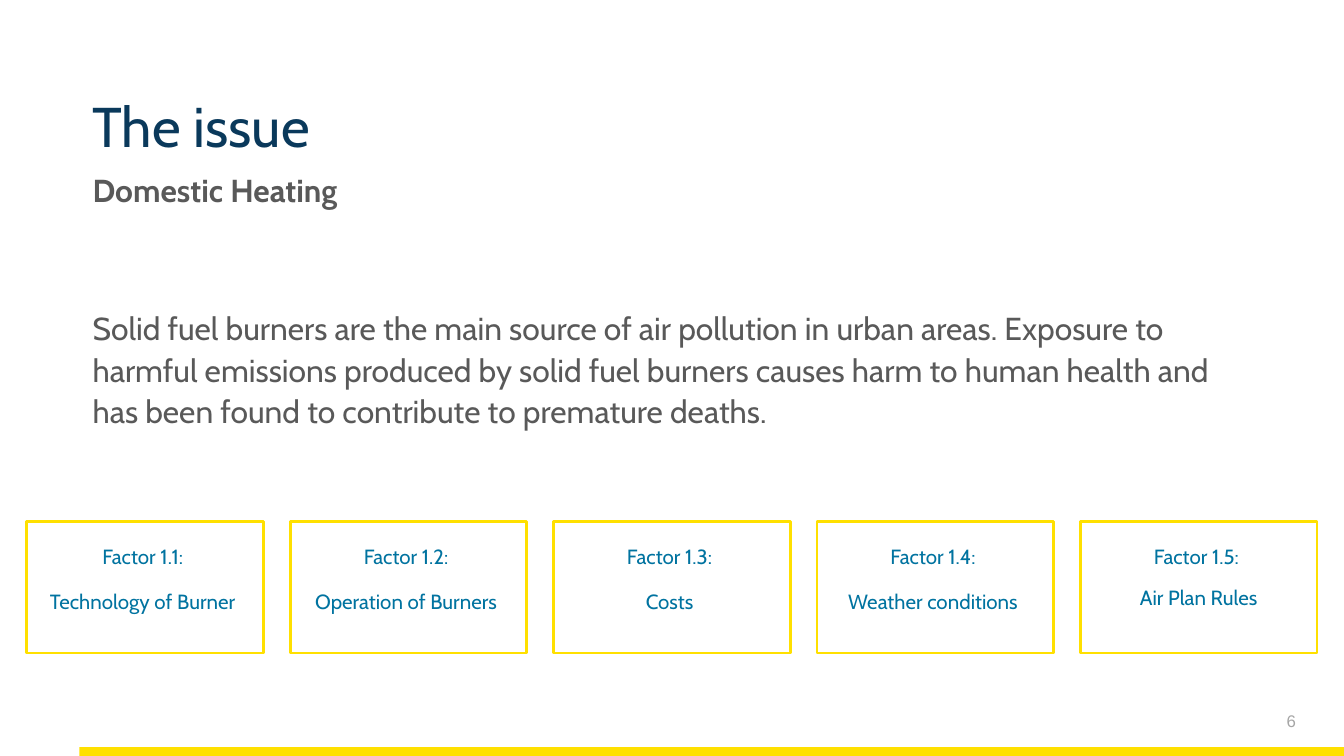
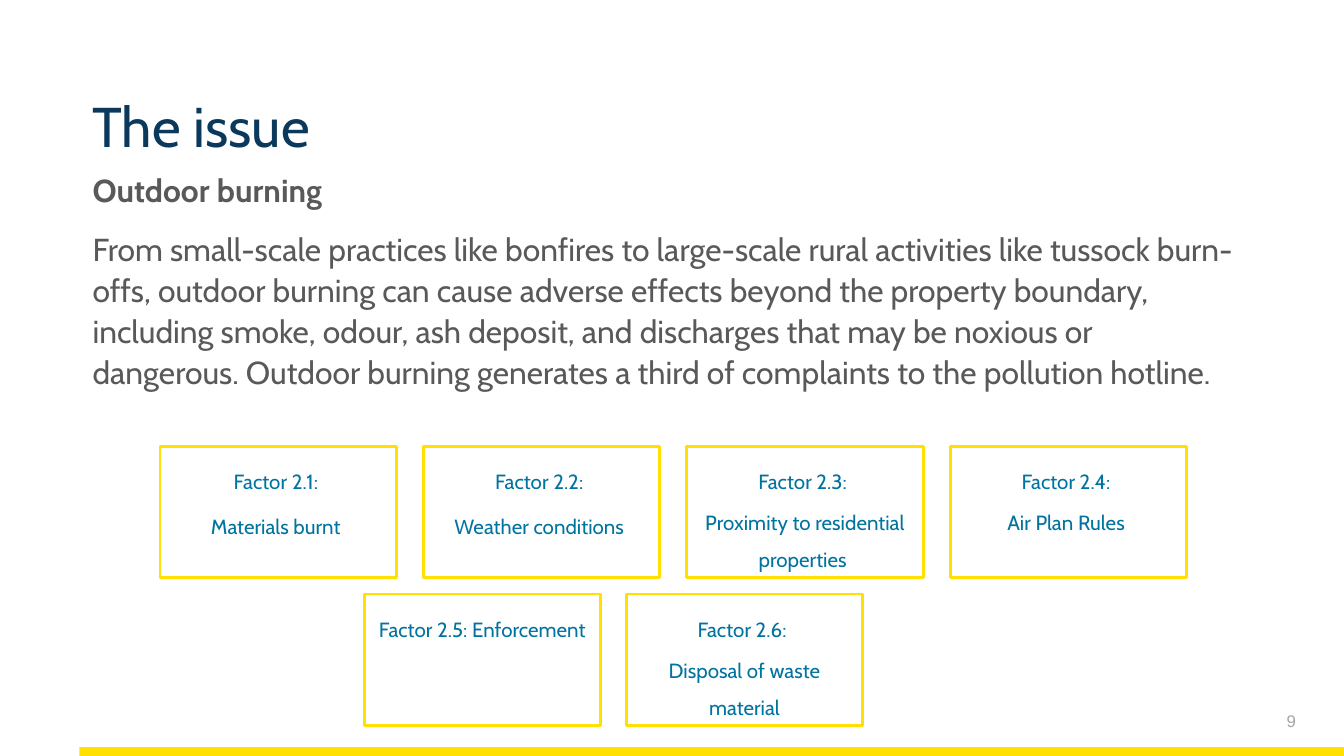
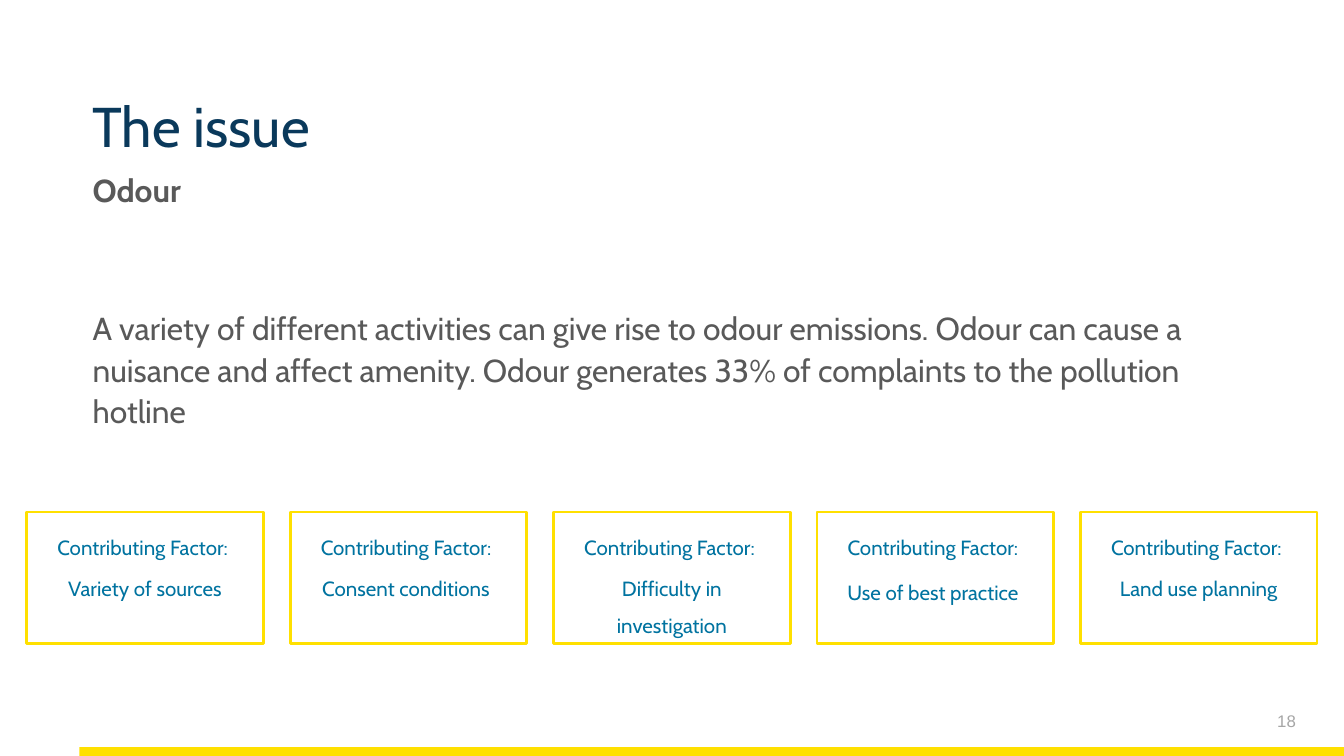
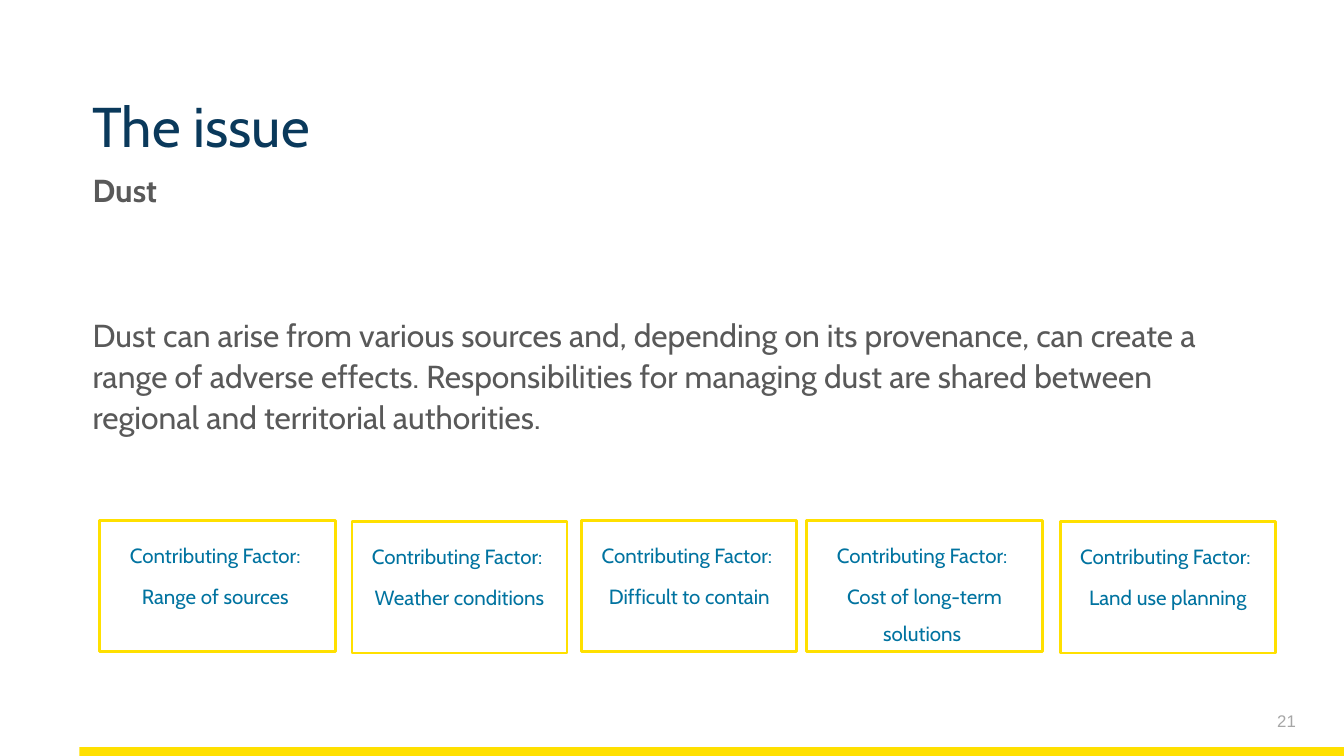
from dataclasses import dataclass

from pptx import Presentation
from pptx.dml.color import RGBColor
from pptx.enum.shapes import MSO_SHAPE as Shape
from pptx.enum.text import MSO_ANCHOR as Anchor, PP_ALIGN as Align
from pptx.util import Emu, Pt

# Scale: 200 px to the inch
PX = 4572
SLIDE_W, SLIDE_H = 2000, 1125

# Shared look
YELLOW, NAVY, BLUE = "FFE000", "0A395B", "0073A0"
GREY, PALE_GREY = "595959", "A6A6A6"
FONT = "Cabin"
LINE = Pt(22)
TEXT_LEFT, TEXT_W = 118, 1744
BAND_TOP = 1112
FACTOR_W, FACTOR_H, PITCH = 352, 196, 392


@dataclass(frozen=True)
class Factor:
    heading: str
    detail: str
    left: int
    top: int
    width: int = FACTOR_W
    spacing: float | Pt = 1.5


@dataclass(frozen=True)
class Issue:
    topic: str
    summary: str
    summary_top: int
    summary_h: int
    number: int
    factors: list[Factor]


def px(length: int) -> Emu:
    return Emu(length * PX)


def box(left: int, top: int, width: int, height: int) -> tuple[Emu, ...]:
    return px(left), px(top), px(width), px(height)


def colour(code: str) -> RGBColor:
    return RGBColor.from_string(code)


def write(paragraph, text: str, *, size: int, color: str, font: str = FONT,
          bold: bool = False, align=Align.LEFT, spacing=LINE, after: int = 2) -> None:
    paragraph.alignment = align
    paragraph.line_spacing = spacing
    paragraph.space_after = Pt(after)
    run = paragraph.add_run()
    run.text = text
    run.font.name = font
    run.font.size = Pt(size)
    run.font.bold = bold
    run.font.color.rgb = colour(color)


def add_text(slide, area: tuple[Emu, ...], text: str, *, anchor=Anchor.TOP, **style) -> None:
    frame = slide.shapes.add_textbox(*area).text_frame
    frame.word_wrap = True
    frame.vertical_anchor = anchor
    write(frame.paragraphs[0], text, **style)


def add_rect(slide, area: tuple[Emu, ...], fill: str | None = None, outline: str | None = None):
    rect = slide.shapes.add_shape(Shape.RECTANGLE, *area)
    rect.shadow.inherit = False
    if fill:
        rect.fill.solid()
        rect.fill.fore_color.rgb = colour(fill)
    else:
        rect.fill.background()
    if outline:
        rect.line.color.rgb = colour(outline)
        rect.line.width = Pt(1.5)
    else:
        rect.line.fill.background()
    return rect


def add_factor(slide, factor: Factor) -> None:
    area = box(factor.left, factor.top, factor.width, FACTOR_H)
    frame = add_rect(slide, area, outline=YELLOW).text_frame
    frame.word_wrap = True
    frame.vertical_anchor = Anchor.TOP
    style = dict(size=11, color=BLUE, align=Align.CENTER)
    write(frame.paragraphs[0], factor.heading, **style)
    if factor.detail:
        write(frame.add_paragraph(), factor.detail, spacing=factor.spacing, **style)


def factor_row(left: int, top: int, entries: list[tuple], pitch: int = PITCH) -> list[Factor]:
    """Equal boxes; each entry is heading, detail and, if fixed, its line spacing."""
    return [
        Factor(heading, detail, left + i * pitch, top, FACTOR_W, *spacing)
        for i, (heading, detail, *spacing) in enumerate(entries)
    ]


def add_issue(deck, issue: Issue) -> None:
    slide = deck.slides.add_slide(deck.slide_layouts[6])
    # Band, title and topic
    add_rect(slide, box(TEXT_LEFT, BAND_TOP, SLIDE_W - TEXT_LEFT, SLIDE_H - BAND_TOP), fill=YELLOW)
    add_text(slide, box(TEXT_LEFT, 152, TEXT_W, 82), "The issue", anchor=Anchor.MIDDLE,
             size=30, color=NAVY, spacing=0.9, after=0)
    add_text(slide, box(TEXT_LEFT, 240, TEXT_W, 56), issue.topic, size=17, color=GREY, bold=True)
    # Summary and slide number
    add_text(slide, box(TEXT_LEFT, issue.summary_top, TEXT_W, issue.summary_h), issue.summary,
             size=17, color=GREY)
    add_text(slide, box(1498, 1042, 450, 60), str(issue.number), anchor=Anchor.MIDDLE,
             size=9, color=PALE_GREY, font="Arial", align=Align.RIGHT, spacing=1.0, after=0)
    # Contributing factors
    for factor in issue.factors:
        add_factor(slide, factor)


CONTRIBUTING = "Contributing Factor: "

ISSUES = [
    Issue(
        "Domestic Heating",
        "Solid fuel burners are the main source of air pollution in urban areas. Exposure to "
        "harmful emissions produced by solid fuel burners causes harm to human health and has "
        "been found to contribute to premature deaths.",
        446, 232, 6,
        factor_row(40, 776, [
            ("Factor 1.1: ", "Technology of Burner ", LINE),
            ("Factor 1.2: ", "Operation of Burners ", LINE),
            ("Factor 1.3: ", "Costs ", LINE),
            ("Factor 1.4: ", "Weather conditions ", LINE),
            ("Factor 1.5: ", "Air Plan Rules"),
        ]),
    ),
    Issue(
        "Outdoor burning",
        "From small-scale practices like bonfires to large-scale rural activities like tussock "
        "burn-offs, outdoor burning can cause adverse effects beyond the property boundary, "
        "including smoke, odour, ash deposit, and discharges that may be noxious or dangerous. "
        "Outdoor burning generates a third of complaints to the pollution hotline.",
        328, 336, 9,
        factor_row(238, 664, [
            ("Factor 2.1: ", "Materials burnt ", LINE),
            ("Factor 2.2: ", "Weather conditions ", LINE),
            ("Factor 2.3: ", "Proximity to residential properties "),
            ("Factor 2.4: ", "Air Plan Rules "),
        ]) + factor_row(542, 884, [
            ("Factor 2.5: Enforcement ", ""),
            ("Factor 2.6: ", "Disposal of waste material"),
        ], pitch=390),
    ),
    Issue(
        "Odour",
        "A variety of different activities can give rise to odour emissions. Odour can cause a "
        "nuisance and affect amenity. Odour generates 33% of complaints to the pollution hotline",
        446, 232, 18,
        factor_row(40, 762, [
            (CONTRIBUTING, "Variety of sources"),
            (CONTRIBUTING, "Consent conditions "),
            (CONTRIBUTING, "Difficulty in investigation"),
            (CONTRIBUTING, "Use of best practice ", LINE),
            (CONTRIBUTING, "Land use planning"),
        ]),
    ),
    Issue(
        "Dust",
        "Dust can arise from various sources and, depending on its provenance, can create a "
        "range of adverse effects. Responsibilities for managing dust are shared between "
        "regional and territorial authorities.",
        456, 212, 21,
        [
            Factor(CONTRIBUTING, "Range of sources ", 148, 774),
            Factor(CONTRIBUTING, "Weather conditions", 524, 776, 320),
            Factor(CONTRIBUTING, "Difficult to contain", 866, 774, 320),
            Factor(CONTRIBUTING, "Cost of long-term solutions ", 1200, 774),
            Factor(CONTRIBUTING, "Land use planning", 1578, 776, 320),
        ],
    ),
]


def main() -> None:
    deck = Presentation()
    deck.slide_width, deck.slide_height = px(SLIDE_W), px(SLIDE_H)
    for issue in ISSUES:
        add_issue(deck, issue)
    deck.save("out.pptx")


if __name__ == "__main__":
    main()
